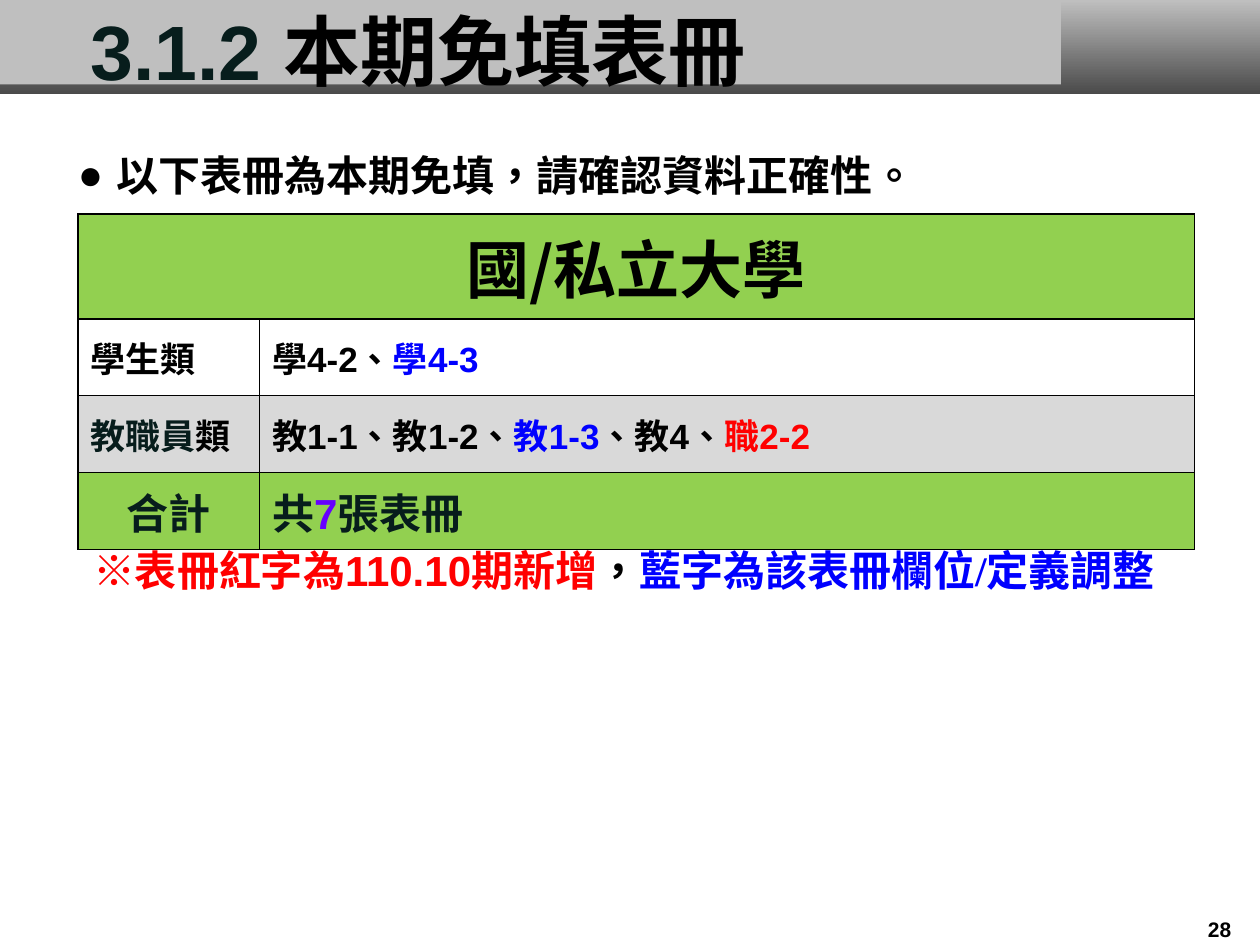
import pptx
import pptx.util
import pptx.dml.color
import pptx.enum.lang
import pptx.enum.shapes
import pptx.enum.text
import pptx.oxml
import pptx.oxml.ns
import lxml.etree

Inches, Pt = pptx.util.Inches, pptx.util.Pt
RGBColor = pptx.dml.color.RGBColor
ALIGN = pptx.enum.text.PP_ALIGN
ANCHOR = pptx.enum.text.MSO_ANCHOR
LANGUAGE = pptx.enum.lang.MSO_LANGUAGE_ID
qn = pptx.oxml.ns.qn

THEME = {
    "black": "000000", "ink": "071D1C", "red": "FF0000", "blue": "0000FF",
    "violet": "6600FF", "green": "92D050", "stripe": "D9D9D9", "white": "FFFFFF",
    "bar": "BFBFBF", "bar_dark": "4A4A4A",
    "title": 44, "heading": 36, "body": 24, "cell": 20, "number": 12,
    "arial": "Arial", "cjk": "Noto Sans CJK SC", "times": "Times New Roman",
}


def write_text(frame, runs, size, align=ALIGN.LEFT):
    """Fill the first paragraph with (text, colour, font) runs."""
    paragraph = frame.paragraphs[0]
    paragraph.alignment = align
    for text, color, font in runs:
        run = paragraph.add_run()
        run.text = text
        formats = {"size": Pt(THEME[size]), "bold": True, "name": THEME[font],
                   "language_id": LANGUAGE.TAIWAN if hasattr(LANGUAGE, "TAIWAN")
                   else LANGUAGE.TRADITIONAL_CHINESE}
        for name, value in formats.items():
            setattr(run.font, name, value)
        run.font.color.rgb = RGBColor.from_string(THEME[color])
        east_asian = lxml.etree.Element(qn("a:ea"), typeface=THEME["cjk"])
        run.font._element.find(qn("a:latin")).addnext(east_asian)
    return paragraph


def add_text(left, top, width, height, runs, size, align=ALIGN.LEFT, **frame_formats):
    box = slide.shapes.add_textbox(Inches(left), Inches(top), Inches(width), Inches(height))
    formats = {"word_wrap": True, "vertical_anchor": ANCHOR.MIDDLE, **frame_formats}
    for name, value in formats.items():
        setattr(box.text_frame, name, value)
    return write_text(box.text_frame, runs, size, align)


presentation = pptx.Presentation()
presentation.slide_width, presentation.slide_height = Inches(10), Inches(7.5)
slide = presentation.slides.add_slide(presentation.slide_layouts[6])

# Title bar: a gradient strip with a flat panel over it
bars = []
for width, height in [(10, 0.75), (8.42, 0.67)]:
    bar = slide.shapes.add_shape(
        pptx.enum.shapes.MSO_SHAPE.RECTANGLE, 0, 0, Inches(width), Inches(height))
    bar.shadow.inherit = False
    bar.line.fill.background()
    bars.append(bar)
strip, panel = bars
strip.fill.gradient()
strip.fill.gradient_angle = 270
for stop, color in zip(strip.fill.gradient_stops, ["bar", "bar_dark"]):
    stop.color.rgb = RGBColor.from_string(THEME[color])
panel.fill.solid()
panel.fill.fore_color.rgb = RGBColor.from_string(THEME["bar"])

# Slide number and title
add_text(9.36, 7.23, 0.64, 0.28, [("28", "black", "arial")], "number", ALIGN.CENTER)
add_text(0.62, 0.06, 8.79, 0.67,
         [("3.1.2 ", "ink", "arial"), ("本期免填表冊", "black", "arial")], "title")

# Table of forms: fill, label runs, content runs, type size, label alignment
rows = [
    ("white", [("學生類", "black", "cjk")],
     [("學4-2、", "black", "arial"), ("學4-3", "blue", "arial")],
     "cell", ALIGN.LEFT),
    ("stripe", [("教職員", "ink", "cjk"), ("類", "black", "arial")],
     [("教1-1、教1-2、", "black", "arial"), ("教1-3", "blue", "arial"),
      ("、教4、", "black", "arial"), ("職2-2", "red", "arial")],
     "cell", ALIGN.LEFT),
    ("green", [("合計", "ink", "cjk")],
     [("共", "ink", "cjk"), ("7", "violet", "arial"), ("張表冊", "ink", "cjk")],
     "body", ALIGN.CENTER),
]
heights = [0.83] + [0.61] * len(rows)
table = slide.shapes.add_table(
    len(heights), 2, Inches(0.62), Inches(1.7), Inches(8.86), Inches(sum(heights))).table
for column, width in zip(table.columns, [1.44, 7.42]):
    column.width = Inches(width)
for row, height in zip(table.rows, heights):
    row.height = Inches(height)

table.cell(0, 0).merge(table.cell(0, 1))
write_text(table.cell(0, 0).text_frame, [("國/私立大學", "black", "cjk")],
           "heading", ALIGN.CENTER)
for index, (fill, label, content, size, align) in enumerate(rows, start=1):
    for column, (runs, alignment) in enumerate([(label, align), (content, ALIGN.LEFT)]):
        cell = table.cell(index, column)
        cell.vertical_anchor = ANCHOR.MIDDLE
        write_text(cell.text_frame, runs, size, alignment)

# Cell fills and borders
fills = ["green"] + [row[0] for row in rows]
for index, fill in enumerate(fills):
    for cell in table.rows[index].cells:
        cell.fill.solid()
        cell.fill.fore_color.rgb = RGBColor.from_string(THEME[fill])
        properties = cell._tc.get_or_add_tcPr()
        for position, side in enumerate(["lnL", "lnR", "lnT", "lnB"]):
            border = lxml.etree.Element(qn("a:" + side), w=str(Pt(1)))
            solid = lxml.etree.SubElement(border, qn("a:solidFill"))
            lxml.etree.SubElement(solid, qn("a:srgbClr"), val=THEME["black"])
            properties.insert(position, border)

# Bulleted lead sentence
lead = add_text(0.52, 1.09, 6.68, 0.59,
                [("以下表冊為本期免填，請確認資料正確性。", "black", "arial")], "body")
lead_properties = lead._p.get_or_add_pPr()
lead_properties.set("marL", str(Inches(0.31)))
lead_properties.set("indent", str(-Inches(0.31)))
bullet_color = lxml.etree.SubElement(lead_properties, qn("a:buClr"))
lxml.etree.SubElement(bullet_color, qn("a:srgbClr"), val=THEME["black"])
lxml.etree.SubElement(lead_properties, qn("a:buFont"), typeface=THEME["arial"])
lxml.etree.SubElement(lead_properties, qn("a:buChar"), char="●")

# Colour key under the table
add_text(0.64, 4.27, 9, 0.5,
         [("※表冊紅字為110.10期新增", "red", "arial"), ("，", "black", "arial"),
          ("藍字為該表冊欄位/定義調整", "blue", "times")], "body",
         word_wrap=False, vertical_anchor=ANCHOR.TOP,
         auto_size=pptx.enum.text.MSO_AUTO_SIZE.SHAPE_TO_FIT_TEXT)

presentation.save("out.pptx")
